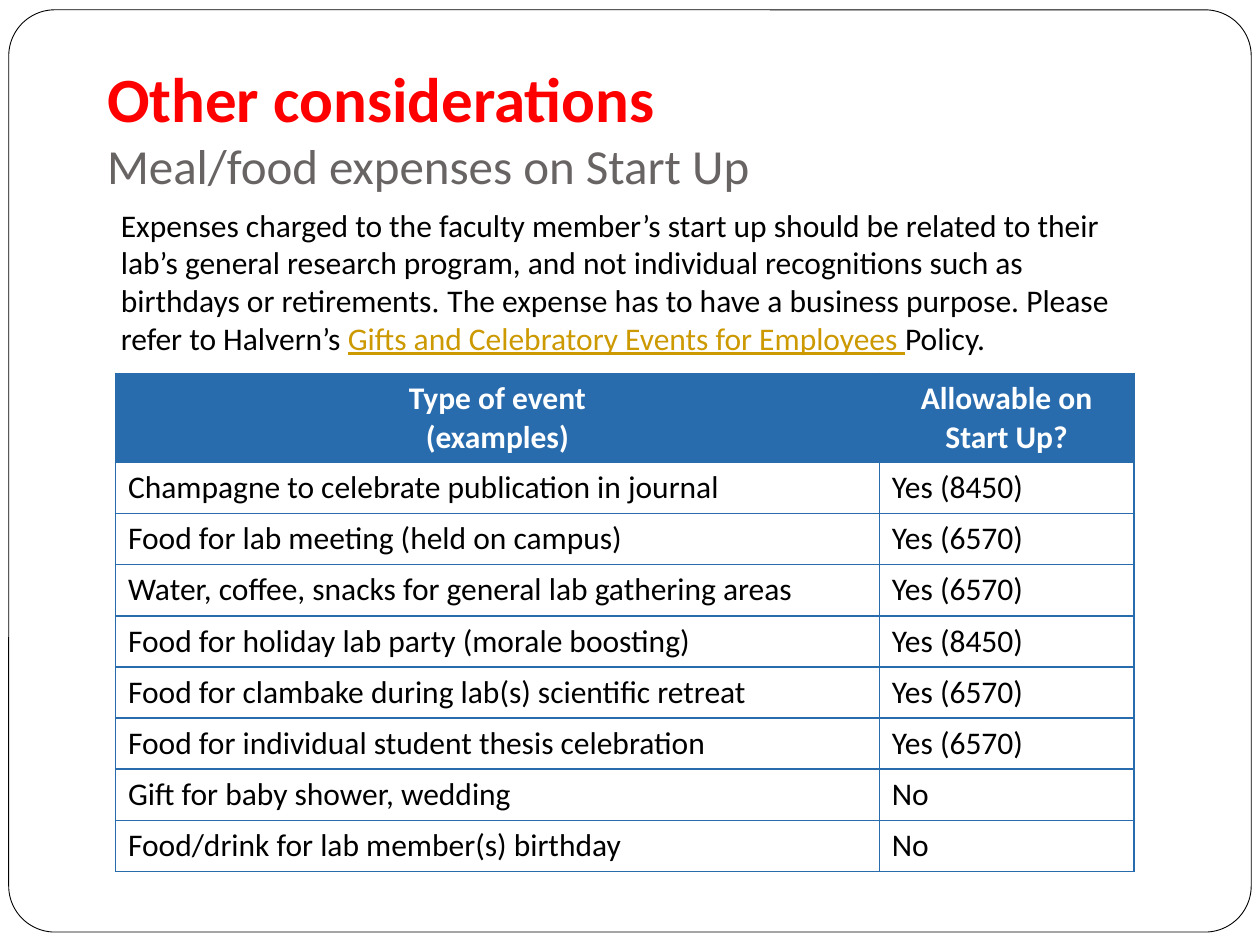
from lxml.etree import SubElement
from pptx import Presentation
from pptx.dml.color import RGBColor
from pptx.enum.shapes import MSO_SHAPE as Preset
from pptx.enum.text import MSO_ANCHOR as Anchor, MSO_AUTO_SIZE as AutoSize, PP_ALIGN as Align
from pptx.oxml.ns import qn
from pptx.util import Pt

WHITE = RGBColor(0xFF, 0xFF, 0xFF)
BLACK = RGBColor(0x00, 0x00, 0x00)
RED = RGBColor(0xFF, 0x00, 0x00)
GREY = RGBColor(0x69, 0x64, 0x64)
GOLD = RGBColor(0xCC, 0x99, 0x00)
BLUE = RGBColor(0x28, 0x6C, 0xAE)
SANS = "Calibri"
SERIF = "Times New Roman"

HEADINGS = [("Other considerations", 36, RED, True),
            ("Meal/food expenses on Start Up", 28, GREY, False)]
POLICY = [
    ("Expenses charged to the faculty member’s start up should be related to their "
     "lab’s general research program, and not individual recognitions such as "
     "birthdays or retirements", SANS, BLACK, False),
    (". ", SERIF, BLACK, False),
    ("The expense has to have a business purpose. Please refer to Halvern’s ",
     SANS, BLACK, False),
    ("Gifts and Celebratory Events for Employees ", SANS, GOLD, True),
    ("Policy.", SANS, BLACK, False),
]
EVENTS = [
    ("Type of event\n(examples)", "Allowable on Start Up?"),
    ("Champagne to celebrate publication in journal", "Yes (8450)"),
    ("Food for lab meeting (held on campus)", "Yes (6570)"),
    ("Water, coffee, snacks for general lab gathering areas", "Yes (6570)"),
    ("Food for holiday lab party (morale boosting)", "Yes (8450)"),
    ("Food for clambake during lab(s) scientific retreat", "Yes (6570)"),
    ("Food for individual student thesis celebration", "Yes (6570)"),
    ("Gift for baby shower, wedding", "No"),
    ("Food/drink for lab member(s) birthday", "No"),
]


def set_font(font, size, color, bold=False, name=SANS):
    font.name = name
    font.size = Pt(size)
    font.bold = bold
    font.color.rgb = color


def add_frame(page, left, top, width, height):
    frame = page.shapes.add_shape(Preset.ROUNDED_RECTANGLE,
                                  Pt(left), Pt(top), Pt(width), Pt(height))
    frame.adjustments[0] = 0.05
    frame.shadow.inherit = False
    frame.fill.solid()
    frame.fill.fore_color.rgb = WHITE
    frame.line.color.rgb = BLACK
    frame.line.width = Pt(0.5)
    page.shapes.title.element.addprevious(frame.element)


def fill_title(page, left, top, width, height):
    title = page.shapes.title
    title.left, title.top, title.width, title.height = map(Pt, (left, top, width, height))
    text = title.text_frame
    text.auto_size = AutoSize.NONE
    text.vertical_anchor = Anchor.BOTTOM
    text.margin_bottom = Pt(7.2)
    text.text = "\n".join(heading[0] for heading in HEADINGS)
    for para, (_, size, color, bold) in zip(text.paragraphs, HEADINGS):
        para.alignment = Align.LEFT
        set_font(para.font, size, color, bold)


def add_policy(page, left, top, width, height):
    box = page.shapes.add_textbox(Pt(left), Pt(top), Pt(width), Pt(height))
    box.text_frame.word_wrap = True
    para = box.text_frame.paragraphs[0]
    for words, name, color, underlined in POLICY:
        span = para.add_run()
        span.text = words
        set_font(span.font, 18, color, name=name)
        span.font.underline = underlined


def add_borders(cell):
    properties = cell._tc.get_or_add_tcPr()
    for index, side in enumerate(("lnL", "lnR", "lnT", "lnB")):
        line = SubElement(properties, qn(f"a:{side}"), w=str(Pt(1)))
        fill = SubElement(line, qn("a:solidFill"))
        SubElement(fill, qn("a:srgbClr"), val=str(BLUE))
        properties.insert(index, line)


def style_cell(cell, is_header):
    if is_header:
        cell.fill.solid()
        cell.fill.fore_color.rgb = BLUE
    else:
        cell.fill.background()
    add_borders(cell)
    for para in cell.text_frame.paragraphs:
        para.alignment = Align.CENTER if is_header else Align.LEFT
        set_font(para.font, 18, WHITE if is_header else BLACK, is_header)


def add_events(page, left, top, width, height):
    header_height = 50.8
    row_height = (height - header_height) / (len(EVENTS) - 1)
    table = page.shapes.add_table(len(EVENTS), 2, Pt(left), Pt(top),
                                  Pt(width), Pt(height)).table
    table.horz_banding = False
    for column, share in zip(table.columns, (0.75, 0.25)):
        column.width = Pt(width * share)
    for row_index, (row, texts) in enumerate(zip(table.rows, EVENTS)):
        is_header = row_index == 0
        row.height = Pt(header_height if is_header else row_height)
        for cell, words in zip(row.cells, texts):
            cell.text = words
            style_cell(cell, is_header)


def main():
    deck = Presentation()
    deck.slide_width, deck.slide_height = Pt(720), Pt(540)
    page = deck.slides.add_slide(deck.slide_layouts[5])
    add_frame(page, 5, 5.6, 710, 527)
    fill_title(page, 54, 24, 612, 94)
    add_policy(page, 62, 114, 592, 94)
    add_events(page, 66, 213.4, 582, 284.8)
    deck.save("out.pptx")


if __name__ == "__main__":
    main()
